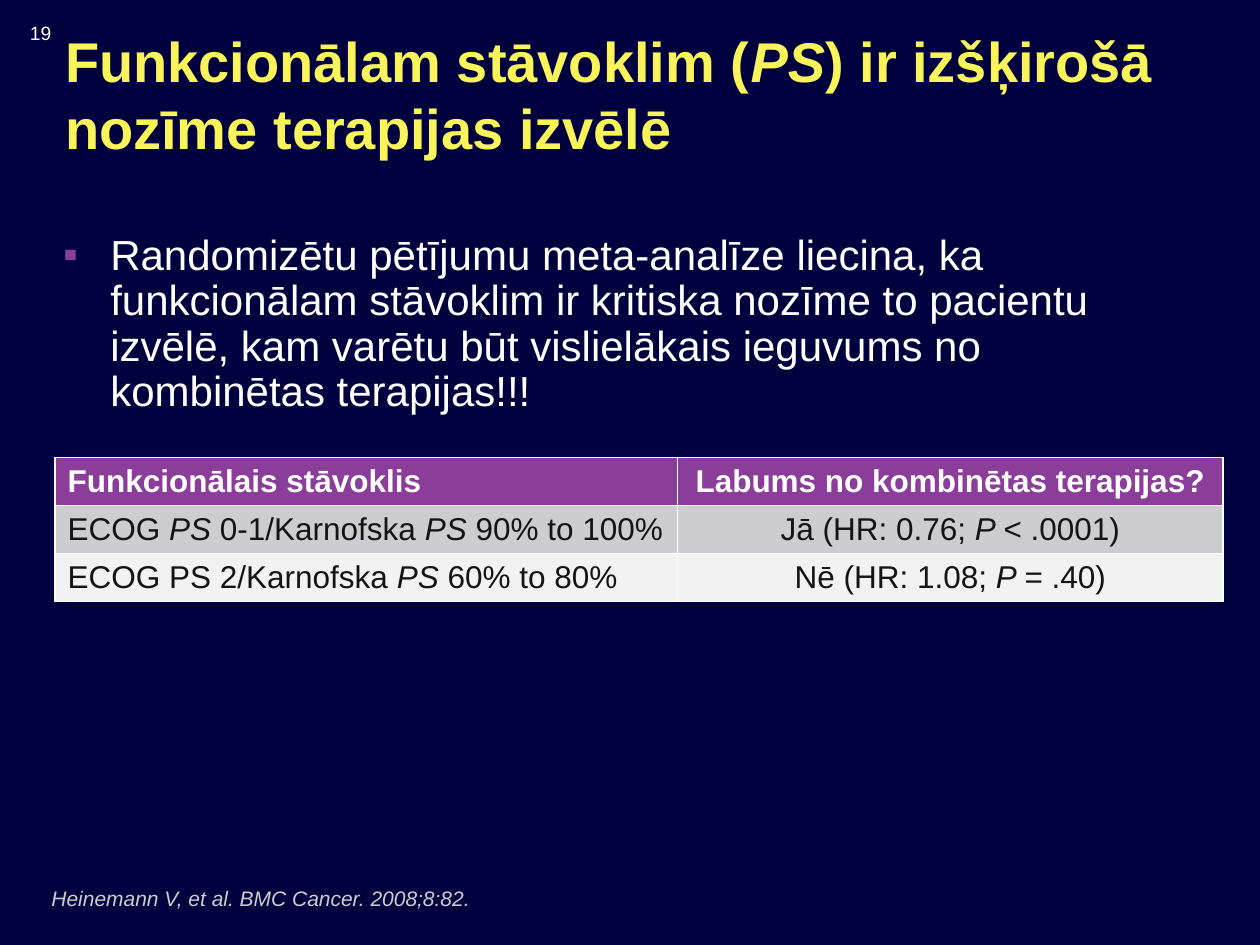
from lxml import etree
from pptx import Presentation
from pptx.dml.color import RGBColor
from pptx.enum.text import MSO_ANCHOR, MSO_AUTO_SIZE, PP_ALIGN
from pptx.oxml.ns import qn
from pptx.util import Pt

LEFT, CENTER = PP_ALIGN.LEFT, PP_ALIGN.CENTER
TOP, MIDDLE, BOTTOM = MSO_ANCHOR.TOP, MSO_ANCHOR.MIDDLE, MSO_ANCHOR.BOTTOM
NO_FIT = MSO_AUTO_SIZE.NONE

FONT = "Arial"
NAVY, YELLOW, PURPLE = "00003E", "F8F45A", "8B3D9A"
WHITE, INK, GRAY, PALE = "FFFFFF", "141415", "CDCDCF", "F2F2F2"

# Each text is a list of runs; every second run is italic
TITLE = ["Funkcionālam stāvoklim (", "PS", ") ir izšķirošā nozīme terapijas izvēlē"]
FINDING = ["Randomizētu pētījumu meta-analīze liecina, ka funkcionālam stāvoklim "
           "ir kritiska nozīme to pacientu izvēlē, kam varētu būt vislielākais "
           "ieguvums no kombinētas terapijas!!!"]
BENEFIT_ROWS = [
    (PURPLE, ["Funkcionālais stāvoklis"], ["Labums no kombinētas terapijas?"]),
    (GRAY, ["ECOG ", "PS", " 0-1/Karnofska ", "PS", " 90% to 100%"],
     ["Jā (HR: 0.76; ", "P ", "< .0001)"]),
    (PALE, ["ECOG PS 2/Karnofska ", "PS", " 60% to 80%"],
     ["Nē (HR: 1.08; ", "P ", "= .40)"]),
]


def color(hex_code):
    return RGBColor.from_string(hex_code)


def place(shape, left, top, width, height):
    shape.left, shape.top = Pt(left), Pt(top)
    shape.width, shape.height = Pt(width), Pt(height)


def add_runs(paragraph, texts, size, ink, bold=False, align=LEFT):
    paragraph.alignment = align
    for index, text in enumerate(texts):
        run = paragraph.add_run()
        run.text = text
        run.font.name = FONT
        run.font.size = Pt(size)
        run.font.bold = bold
        run.font.italic = index % 2 == 1
        run.font.color.rgb = color(ink)


def add_bullet(paragraph, symbol, ink, indent):
    properties = paragraph._p.get_or_add_pPr()
    properties.set("marL", str(Pt(indent)))
    properties.set("indent", str(-Pt(indent)))
    bullet_color = etree.SubElement(properties, qn("a:buClr"))
    etree.SubElement(bullet_color, qn("a:srgbClr"), val=ink)
    etree.SubElement(properties, qn("a:buFont"), typeface=FONT)
    etree.SubElement(properties, qn("a:buChar"), char=symbol)


def fill_title(title):
    place(title, 30, 10, 690, 87)
    frame = title.text_frame
    frame.auto_size = NO_FIT
    frame.vertical_anchor = MIDDLE
    add_runs(frame.paragraphs[0], TITLE, 32, YELLOW, bold=True)


def fill_body(body):
    place(body, 28.8, 130.3, 666, 96)
    frame = body.text_frame
    frame.auto_size = NO_FIT
    finding = frame.paragraphs[0]
    add_bullet(finding, "▪", PURPLE, 27)
    finding.line_spacing = 0.9
    finding.space_before = Pt(0)
    finding.space_after = Pt(7)
    add_runs(finding, FINDING, 24, WHITE)


def add_benefit_table(slide):
    column_widths, row_height = (355.7, 311.7), 27.4
    table = slide.shapes.add_table(
        len(BENEFIT_ROWS), len(column_widths), Pt(31.5), Pt(261.5),
        Pt(sum(column_widths)), Pt(row_height * len(BENEFIT_ROWS))).table
    for column, width in zip(table.columns, column_widths):
        column.width = Pt(width)
    for row, (fill, *texts) in zip(table.rows, BENEFIT_ROWS):
        row.height = Pt(row_height)
        header = fill == PURPLE
        for cell, runs, align in zip(row.cells, texts, (LEFT, CENTER)):
            cell.fill.solid()
            cell.fill.fore_color.rgb = color(fill)
            cell.vertical_anchor = TOP if header else MIDDLE
            add_runs(cell.text_frame.paragraphs[0], runs, 18,
                     WHITE if header else INK, bold=header, align=align)


def add_note(slide, box, texts, size, ink, anchor=TOP):
    frame = slide.shapes.add_textbox(*map(Pt, box)).text_frame
    frame.word_wrap = True
    frame.vertical_anchor = anchor
    add_runs(frame.paragraphs[0], texts, size, ink)


def main():
    deck = Presentation()
    deck.slide_width, deck.slide_height = Pt(720), Pt(540)
    slide = deck.slides.add_slide(deck.slide_layouts[1])
    slide.background.fill.solid()
    slide.background.fill.fore_color.rgb = color(NAVY)

    # Title and main finding
    fill_title(slide.shapes.title)
    fill_body(slide.placeholders[1])

    # Benefit by performance status
    add_benefit_table(slide)

    # Citation (italic, hence second in its list) and slide number
    citation = ["", "Heinemann V, et al. BMC Cancer. 2008;8:82."][1:]
    add_note(slide, (22.3, 502.6, 674, 21.6), citation, 12, GRAY, BOTTOM)
    citation_box = slide.shapes[-1]
    citation_box.text_frame.paragraphs[0].runs[0].font.italic = True
    add_note(slide, (10, 8.6, 33, 21), ["19"], 11, WHITE)

    deck.save("out.pptx")


if __name__ == "__main__":
    main()
